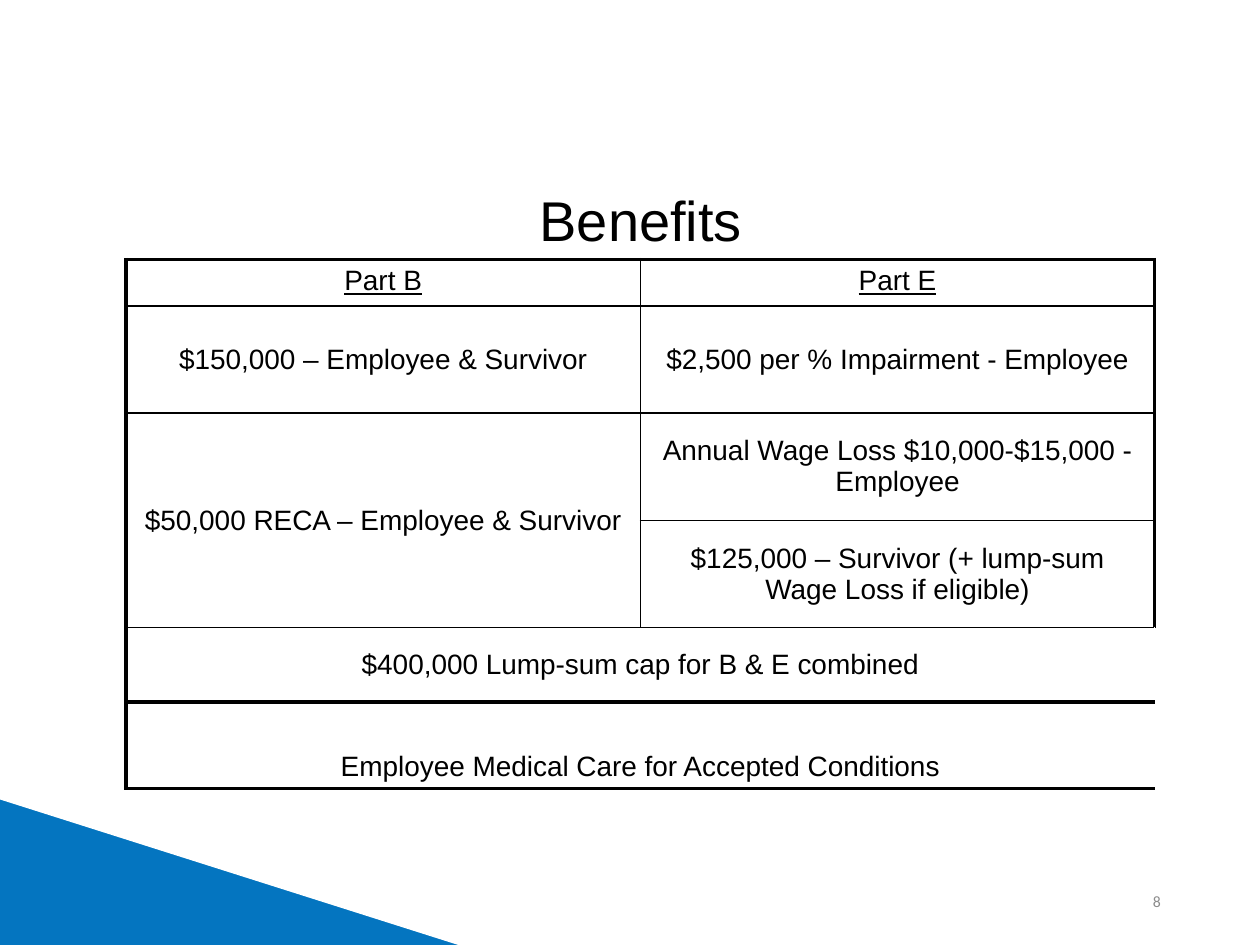
from dataclasses import dataclass
from itertools import product

from lxml.etree import SubElement
from pptx import Presentation
from pptx.dml.color import RGBColor
from pptx.enum.shapes import MSO_SHAPE
from pptx.enum.text import MSO_ANCHOR, PP_ALIGN
from pptx.oxml.ns import qn
from pptx.util import Cm, Pt


@dataclass(frozen=True)
class Theme:
    """Colours, type sizes and line widths of the deck."""
    ink: RGBColor = RGBColor(0, 0, 0)
    muted: RGBColor = RGBColor(0x8C, 0x8C, 0x8C)
    accent: RGBColor = RGBColor(0x04, 0x75, 0xC0)
    paper: RGBColor = RGBColor(255, 255, 255)
    title: Pt = Pt(32)
    body: Pt = Pt(16)
    number: Pt = Pt(9)
    thin: Pt = Pt(1)
    heavy: Pt = Pt(2.25)


@dataclass(frozen=True)
class Box:
    """A rectangle in centimetres."""
    left: float
    top: float
    width: float
    height: float

    def lengths(self):
        """Return the four lengths for python-pptx."""
        return [Cm(n) for n in (self.left, self.top, self.width, self.height)]


THEME = Theme()
ROW_HEIGHTS = [0.94, 2.16, 2.16, 2.16, 1.5, 1.75]
REGIONS = [
    (0, 0, 1, 1, "Part B"),
    (0, 1, 1, 1, "Part E"),
    (1, 0, 1, 1, "$150,000 – Employee & Survivor"),
    (1, 1, 1, 1, "$2,500 per % Impairment - Employee"),
    (2, 0, 2, 1, "$50,000 RECA – Employee & Survivor"),
    (2, 1, 1, 1, "Annual Wage Loss $10,000-$15,000 - Employee"),
    (3, 1, 1, 1, "$125,000 – Survivor (+ lump-sum Wage Loss if eligible)"),
    (4, 0, 1, 2, "$400,000 Lump-sum cap for B & E combined"),
    (5, 0, 1, 2, "Employee Medical Care for Accepted Conditions"),
]


def write(frame, text, align=PP_ALIGN.CENTER, **formats):
    """Write one formatted line of text into a text frame."""
    frame.word_wrap = True
    para = frame.paragraphs[0]
    para.alignment = align
    span = para.add_run()
    span.text = text
    color = formats.pop("color", THEME.ink)
    for name, value in ({"name": "Arial"} | formats).items():
        setattr(span.font, name, value)
    span.font.color.rgb = color


def add_corner(page, box):
    """Draw the coloured corner triangle."""
    corner = page.shapes.add_shape(MSO_SHAPE.RIGHT_TRIANGLE, *box.lengths())
    corner.shadow.inherit = False
    corner.fill.solid()
    corner.fill.fore_color.rgb = THEME.accent
    corner.line.color.rgb = THEME.paper
    corner.line.width = Pt(1.5)


def add_label(page, box, text, anchor=MSO_ANCHOR.TOP, **formats):
    """Add a text box holding one line."""
    frame = page.shapes.add_textbox(*box.lengths()).text_frame
    frame.vertical_anchor = anchor
    write(frame, text, **formats)


def set_borders(cell, widths):
    """Give a cell the border widths listed by side, in schema order."""
    properties = cell._tc.get_or_add_tcPr()
    for index, (side, width) in enumerate(widths.items()):
        line = SubElement(properties, qn(f"a:ln{side}"), w=str(int(width)))
        fill = SubElement(line, qn("a:solidFill"))
        SubElement(fill, qn("a:srgbClr"), val=str(THEME.ink))
        properties.insert(index, line)


def add_benefits(page, box):
    """Build the benefits table with its merged regions and ruled edges."""
    last = len(ROW_HEIGHTS) - 1
    table = page.shapes.add_table(last + 1, 2, *box.lengths()).table
    table.first_row = table.horz_banding = False
    for row, height in zip(table.rows, ROW_HEIGHTS):
        row.height = Cm(height)
    for column in table.columns:
        column.width = Cm(box.width / 2)
    anchors = {0: MSO_ANCHOR.TOP, last: MSO_ANCHOR.BOTTOM}
    for top, left, height, width, text in REGIONS:
        bottom, right = top + height - 1, left + width - 1
        cell = table.cell(top, left)
        if height * width > 1:
            cell.merge(table.cell(bottom, right))
        cell.vertical_anchor = anchors.get(top, MSO_ANCHOR.MIDDLE)
        write(cell.text_frame, text, size=THEME.body, underline=top == 0)
        edges = {
            "L": (left, None, left == 0),
            "R": (right, None, right == 1),
            "T": (None, top, top in (0, last)),
            "B": (None, bottom, bottom >= last - 1),
        }
        for row, col in product(range(top, bottom + 1), range(left, right + 1)):
            part = table.cell(row, col)
            part.fill.background()
            set_borders(part, {
                side: THEME.heavy if heavy else THEME.thin
                for side, (at_col, at_row, heavy) in edges.items()
                if at_col == col or at_row == row
            })


def main():
    """Build and save the deck."""
    deck = Presentation()
    deck.slide_width, deck.slide_height = Cm(25.4), Cm(19.05)
    page = deck.slides.add_slide(deck.slide_layouts[6])
    add_corner(page, Box(-0.03, 16.08, 9.45, 3))
    add_label(page, Box(17.93, 17.65, 5.72, 1.02), "8", MSO_ANCHOR.MIDDLE,
              align=PP_ALIGN.RIGHT, name="Calibri", size=THEME.number,
              color=THEME.muted)
    add_label(page, Box(2.34, 3.61, 21.16, 1.63), "Benefits", size=THEME.title)
    add_benefits(page, Box(2.54, 5.23, 20.74, sum(ROW_HEIGHTS)))
    deck.save("out.pptx")


if __name__ == "__main__":
    main()
